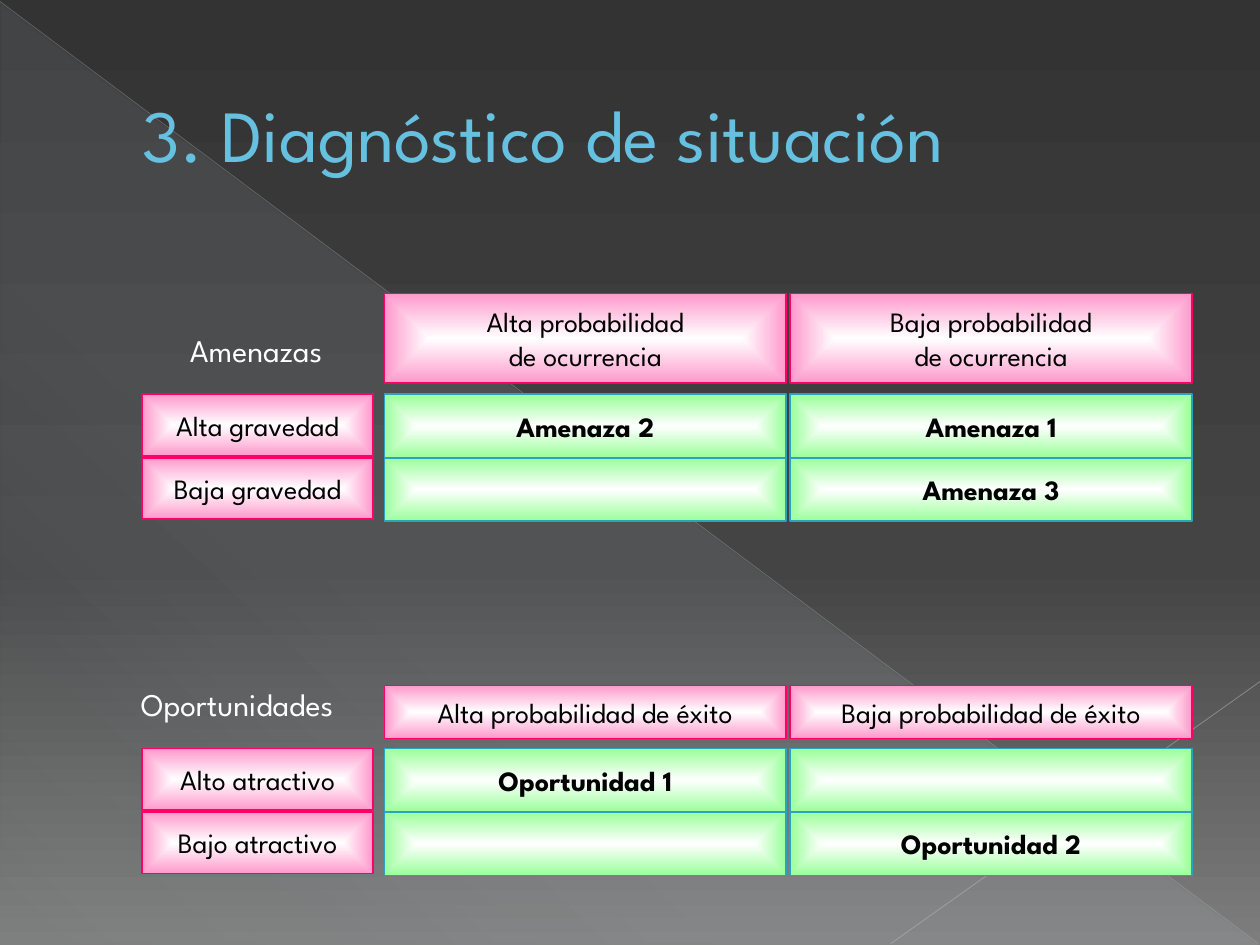
from lxml import etree
from pptx import Presentation
from pptx.dml.color import RGBColor
from pptx.enum import shapes, text
from pptx.oxml import parse_xml
from pptx.oxml.ns import nsdecls, qn
from pptx.util import Cm, Pt

FONT = "League Spartan"
PINK = ("FF99CC", "FF0066")
GREEN = ("99FF99", "2DA2BF")
COLUMNS = (7.75, 15.93)
COLUMN_WIDTH = 8.1
LABEL_LEFT, LABEL_WIDTH = 2.87, 4.65
ROW_HEIGHT = 1.28
LABEL_HEIGHT = 1.24


def color(value):
    """Turn a hex string into a colour."""
    return RGBColor.from_string(value)


def set_gradient(fill, parent, stops, angle=None):
    """Fill with (position, colour, opacity) stops, linear or from the centre."""
    fill.solid()
    marks = "".join(
        f'<a:gs pos="{position * 1000}"><a:srgbClr val="{value}">'
        f'<a:alpha val="{opacity * 1000}"/></a:srgbClr></a:gs>'
        for position, value, opacity in stops
    )
    if angle is None:
        course = ('<a:path path="rect"><a:fillToRect l="50000" t="50000" '
                  'r="50000" b="50000"/></a:path>').replace('"rect"', '"shape"')
    else:
        course = f'<a:lin ang="{angle * 60000}" scaled="0"/>'
    gradient = parse_xml(
        f'<a:gradFill {nsdecls("a")} rotWithShape="1"><a:gsLst>{marks}</a:gsLst>'
        f"{course}</a:gradFill>"
    )
    parent.replace(parent.find(qn("a:solidFill")), gradient)


def add_background(page):
    """Paint the dark page with its pale triangle and thin diagonals."""
    stops = [(0, "333333", 100), (60, "444444", 100), (100, "7D7D7D", 100)]
    fill = page.background.fill
    fill.solid()
    set_gradient(fill, page.element.find(".//" + qn("p:bgPr")), stops, 90)
    triangle = page.shapes.add_shape(
        shapes.MSO_SHAPE.RIGHT_TRIANGLE, Cm(0.02), Cm(0.05), Cm(25.36), Cm(19)
    )
    triangle.shadow.inherit = False
    triangle.line.fill.background()
    stops = [(0, "DEF5FA", 10), (70, "DEF5FA", 8), (100, "DEF5FA", 1)]
    set_gradient(triangle.fill, triangle.element.spPr, stops, 133)
    add_line(page, (0, 0.03, 25.37, 19.02), "B9B9B9", 0.39, 35)
    add_line(page, (25.4, 13.74, 17.96, 19.02), "C1C1C1", 0.47, 45)


def add_line(page, ends, value, width, opacity):
    """Draw a translucent straight line."""
    line = page.shapes.add_connector(
        shapes.MSO_CONNECTOR.STRAIGHT, *[Cm(end) for end in ends]
    )
    line.line.color.rgb = color(value)
    line.line.width = Pt(width)
    properties = line._element.spPr
    tint = properties.find(".//" + qn("a:srgbClr"))
    etree.SubElement(tint, qn("a:alpha"), val=str(opacity * 1000))
    etree.SubElement(properties, qn("a:effectLst"))


def write(frame, wording, size, value, bold=False, align=None):
    """Write one paragraph for each line of the wording."""
    frame.text = wording
    for paragraph in frame.paragraphs:
        paragraph.alignment = align
        paragraph.font.name = FONT
        paragraph.font.size = Pt(size)
        paragraph.font.bold = bold
        paragraph.font.color.rgb = color(value)


def add_text(page, place, wording, size, value):
    """Add an unboxed line of text and return its frame."""
    frame = page.shapes.add_textbox(*[Cm(length) for length in place]).text_frame
    frame.word_wrap = False
    write(frame, wording, size, value)
    return frame


def add_cell(page, place, wording, scheme, bold=False):
    """Add a cell that glows white from its centre."""
    edge, outline = scheme
    box = page.shapes.add_shape(
        shapes.MSO_SHAPE.RECTANGLE, *[Cm(length) for length in place]
    )
    box.shadow.inherit = False
    set_gradient(box.fill, box.element.spPr, [(0, "FFFFFF", 100), (100, edge, 100)])
    box.line.color.rgb = color(outline)
    box.line.width = Pt(1)
    frame = box.text_frame
    frame.word_wrap = False
    frame.vertical_anchor = text.MSO_ANCHOR.MIDDLE
    if wording:
        write(frame, wording, 16, "000000", bold, text.PP_ALIGN.CENTER)


def add_matrix(page, header_top, header_height, headers, rows_top, rows):
    """Add a matrix of two headed columns and labelled rows."""
    for left, header in zip(COLUMNS, headers):
        add_cell(page, (left, header_top, COLUMN_WIDTH, header_height), header, PINK)
    for index, (label, *entries) in enumerate(rows):
        top = rows_top + index * ROW_HEIGHT
        for left, entry in zip(COLUMNS, entries):
            add_cell(page, (left, top, COLUMN_WIDTH, ROW_HEIGHT), entry, GREEN, True)
        add_cell(page, (LABEL_LEFT, top, LABEL_WIDTH, LABEL_HEIGHT), label, PINK)


def main():
    """Build the slide and save it."""
    deck = Presentation()
    deck.slide_width, deck.slide_height = Cm(25.4), Cm(19.05)
    page = deck.slides.add_slide(deck.slide_layouts[6])
    add_background(page)
    title = add_text(
        page, (1.27, 0.74, 22.86, 3.89), "3. Diagnóstico de situación", 42, "66C0E0"
    )
    title.word_wrap = True
    title.margin_left = Cm(1.6)
    title.vertical_anchor = text.MSO_ANCHOR.MIDDLE
    add_matrix(
        page, 5.92, 1.8,
        ("Alta probabilidad\nde ocurrencia", "Baja probabilidad\nde ocurrencia"),
        7.95,
        [("Alta gravedad", "Amenaza 2", "Amenaza 1"),
         ("Baja gravedad", "", "Amenaza 3")],
    )
    add_matrix(
        page, 13.82, 1.07,
        ("Alta probabilidad de éxito", "Baja probabilidad de éxito"),
        15.09,
        [("Alto atractivo", "Oportunidad 1", ""),
         ("Bajo atractivo", "", "Oportunidad 2")],
    )
    add_text(page, (3.58, 6.55, 3.78, 1.02), "Amenazas", 18, "FFFFFF")
    add_text(page, (2.59, 13.69, 5.23, 1.02), "Oportunidades", 18, "FFFFFF")
    deck.save("out.pptx")


if __name__ == "__main__":
    main()
